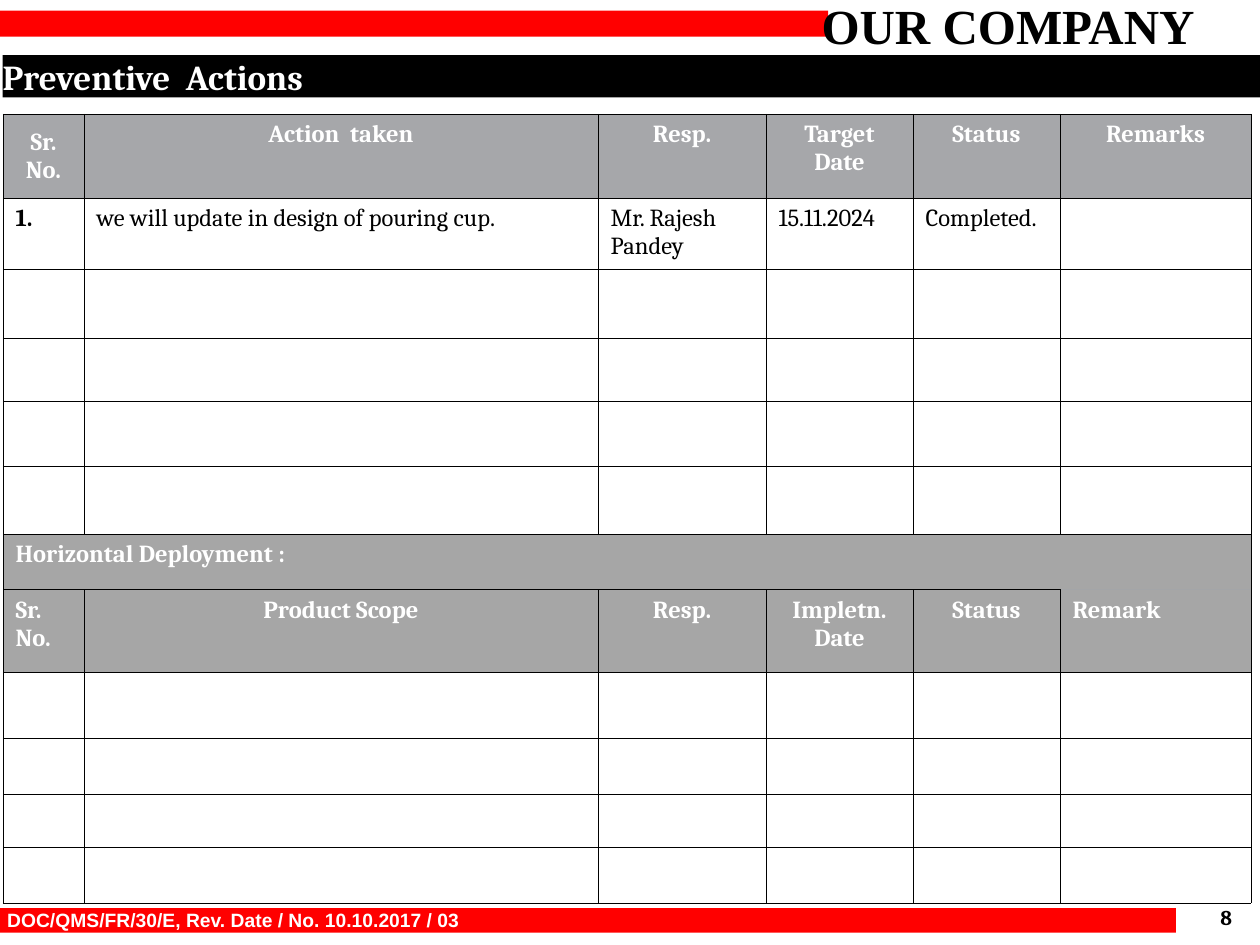
"""Build the preventive actions slide with its action and deployment table."""
from dataclasses import dataclass
from lxml.etree import SubElement
from pptx import Presentation
from pptx.dml.color import RGBColor as RGB
from pptx.enum.shapes import MSO_SHAPE as Shape
from pptx.enum.text import MSO_ANCHOR as Anchor, MSO_AUTO_SIZE as Fit, PP_ALIGN as Align
from pptx.oxml.ns import qn
from pptx.util import Pt


@dataclass(frozen=True)
class Theme:
    black: str = "000000"
    white: str = "FFFFFF"
    red: str = "FF0000"
    head: str = "A6A7AA"
    band: str = "A6A6A6"
    seam: str = "A3A5A8"
    face: str = "Cambria"
    brand: int = 28
    title: int = 20
    body: int = 14
    page: int = 12
    foot: int = 11


theme = Theme()


def style(frame, size, color, bold=True, align=Align.LEFT, face=theme.face):
    for para in frame.paragraphs:
        para.alignment = align
        font = para.font
        font.name, font.size, font.bold = face, Pt(size), bold
        font.color.rgb = RGB.from_string(color)


def edge(cell, side, color, width):
    line = SubElement(cell._tc.get_or_add_tcPr(), qn(f"a:ln{side}"), w=str(Pt(width)))
    fill = SubElement(line, qn("a:solidFill"))
    SubElement(fill, qn("a:srgbClr"), val=color)


deck = Presentation()
deck.slide_width, deck.slide_height = Pt(720), Pt(540)
slide = deck.slides.add_slide(deck.slide_layouts[5])
shapes = slide.shapes

for box in [(-0.7, 6, 474, 15), (0, 519, 672, 14)]:
    bar = shapes.add_shape(Shape.RECTANGLE, *map(Pt, box))
    bar.shadow.inherit = False
    bar.fill.solid()
    bar.fill.fore_color.rgb = RGB.from_string(theme.red)
    bar.line.fill.background()

labels = [
    ("OUR COMPANY", (456, -6, 240, 42), theme.brand, theme.black, Align.CENTER, "Times New Roman", 7.2, 3.6),
    ("DOC/QMS/FR/30/E, Rev. Date / No. 10.10.2017 / 03", (-3, 515.5, 647, 21),
     theme.foot, theme.white, Align.LEFT, "Arial", 7.2, 3.6),
    ("8", (665, 517, 39, 14.5), theme.page, theme.black, Align.RIGHT, theme.face, 0, 0),
]
for text, box, size, color, align, face, side, top in labels:
    frame = shapes.add_textbox(*map(Pt, box)).text_frame
    frame.word_wrap = True
    frame.margin_left = frame.margin_right = Pt(side)
    frame.margin_top = frame.margin_bottom = Pt(top)
    frame.text = text
    style(frame, size, color, align=align, face=face)

title = shapes.title
title.left, title.top, title.width, title.height = map(Pt, (1.5, 31.5, 718.5, 24.2))
title.fill.solid()
title.fill.fore_color.rgb = RGB.from_string(theme.black)
frame = title.text_frame
frame.text = "Preventive  Actions"
frame.auto_size = Fit.NONE
frame.vertical_anchor = Anchor.MIDDLE
frame.margin_left = frame.margin_right = frame.margin_top = frame.margin_bottom = 0
style(frame, theme.title, theme.white)

widths = [46.3, 293.8, 96, 84, 84, 109.2]
heights = [48, 40.5, 39.5, 35.5, 37.5, 38.5, 32, 47, 38, 32, 30, 32]
words = {
    0: ["Sr. No.", "Action  taken", "Resp.", "Target\nDate", "Status", "Remarks"],
    1: ["1.", "we will update in design of pouring cup.", "Mr. Rajesh Pandey", "15.11.2024", "Completed.", ""],
    6: ["Horizontal Deployment :"] + [""] * 5,
    7: ["Sr. No.", "Product Scope", "Resp.", "Impletn.\nDate", "Status", "Remark"],
}
fills = {0: theme.head, 6: theme.band, 7: theme.band}
left = {(6, 0), (7, 0), (7, 5)}

table = shapes.add_table(len(heights), len(widths), Pt(1.7), Pt(65.2),
                         Pt(sum(widths)), Pt(sum(heights))).table
table.first_row = table.horz_banding = False
for col, width in zip(table.columns, widths):
    col.width = Pt(width)
for r, height in enumerate(heights):
    table.rows[r].height = Pt(height)
    for c in range(len(widths)):
        cell = table.cell(r, c)
        for side in "LRT" if r == 6 else "LRTB":
            seam = (r, c, side) == (7, 5, "T")
            edge(cell, side, theme.seam if seam else theme.black, 0.75 if seam else 0.25)
        if r in fills:
            cell.fill.solid()
            cell.fill.fore_color.rgb = RGB.from_string(fills[r])
        else:
            cell.fill.background()
        cell.text = words[r][c] if r in words else ""
        mid = r in fills and (r, c) not in left
        style(cell.text_frame, theme.body, theme.white if r in fills else theme.black,
              r in fills or c == 0, Align.CENTER if mid else Align.LEFT)
table.cell(0, 0).vertical_anchor = Anchor.MIDDLE
table.cell(6, 0).merge(table.cell(6, 5))

deck.save("out.pptx")
